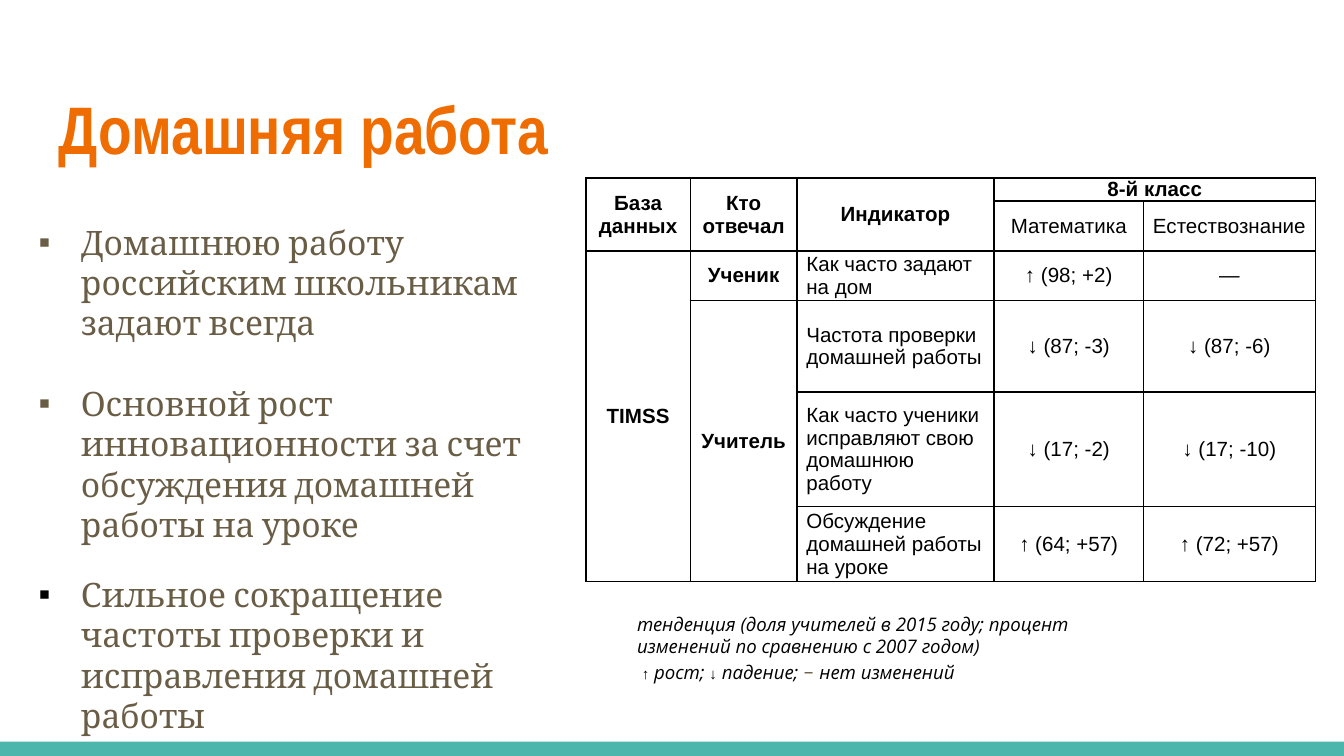
import pptx
import pptx.util
import pptx.dml.color
import pptx.enum.shapes
import pptx.enum.text
import pptx.oxml
import lxml.etree

Cm, Pt = pptx.util.Cm, pptx.util.Pt
ALIGN = pptx.enum.text.PP_ALIGN
ANCHOR = pptx.enum.text.MSO_ANCHOR

# Content
TITLE = "Домашняя работа"
# text, space before (pt), bullet colour name
POINTS = [
    ("Домашнюю работу российским школьникам задают всегда", 0, "brown"),
    ("Основной рост инновационности за счет обсуждения домашней работы на уроке", 21.6, "brown"),
    ("Сильное сокращение частоты проверки и исправления домашней работы", 16, "black"),
]
# None marks a cell covered by a merge
ROWS = [
    ["База данных", "Кто отвечал", "Индикатор", "8-й класс", None],
    [None, None, None, "Математика", "Естествознание"],
    ["TIMSS", "Ученик", "Как часто задают на дом", "↑ (98; +2)", "—"],
    [None, "Учитель", "Частота проверки домашней работы", "↓ (87; -3)", "↓ (87; -6)"],
    [None, None, "Как часто ученики исправляют свою домашнюю работу", "↓ (17; -2)", "↓ (17; -10)"],
    [None, None, "Обсуждение домашней работы на уроке", "↑ (64; +57)", "↑ (72; +57)"],
]
MERGES = [((0, 0), (1, 0)), ((0, 1), (1, 1)), ((0, 2), (1, 2)),
          ((0, 3), (0, 4)), ((2, 0), (5, 0)), ((3, 1), (5, 1))]
COLUMN_WIDTHS = [1.98, 2.01, 3.73, 2.82, 3.25]
ROW_HEIGHTS = [0.43, 0.94, 0.94, 1.73, 2.16, 1.42]
# line pitch (pt), then spans of text and style name
NOTE = [
    (11.8, [("тенденция (доля учителей в 2015 году; процент изменений "
             "по сравнению с 2007 годом)", "note")]),
    (13.9, [(" ", "note"), ("↑", "arrow"), (" рост; ", "note"), ("↓", "arrow"),
            (" падение; ", "note"), ("– ", "dash"), ("нет изменений", "note")]),
]

THEME = {
    "colors": {"orange": "EF6C00", "brown": "695D46", "teal": "4DB6AC",
               "black": "000000", "white": "FFFFFF"},
    "styles": {
        "title": dict(size=36, font="Arial Narrow", color="orange", bold=True),
        "point": dict(size=18, font="Cambria", color="brown"),
        "cell": dict(size=11, font="Arial", color="black"),
        "note": dict(size=10, font="Open Sans", color="black", italic=True),
        "arrow": dict(size=8, font="Arial", color="black"),
        "dash": dict(size=12, font="Calibri", color="brown"),
    },
}


def rgb(name):
    return pptx.dml.color.RGBColor.from_string(THEME["colors"][name])


def add_span(para, text, size, font, color, bold=False, italic=False):
    span = para.add_run()
    span.text = text
    span.font.size, span.font.name = Pt(size), font
    span.font.bold, span.font.italic = bold, italic
    span.font.color.rgb = rgb(color)


def add_xml(parent, tag, **attributes):
    child = lxml.etree.SubElement(parent, pptx.oxml.ns.qn(tag))
    for name, value in attributes.items():
        child.set(name, str(value))
    return child


def add_bullet(para, color):
    properties = para._p.get_or_add_pPr()
    indent = Cm(0.8)
    properties.set("marL", str(indent))
    properties.set("indent", str(-indent))
    add_xml(add_xml(properties, "a:buClr"), "a:srgbClr", val=THEME["colors"][color])
    add_xml(properties, "a:buFont", typeface="Arial")
    add_xml(properties, "a:buChar", char="▪")


def set_borders(cell):
    properties = cell._tc.get_or_add_tcPr()
    for position, tag in enumerate(("a:lnL", "a:lnR", "a:lnT", "a:lnB")):
        line = add_xml(properties, tag, w=Pt(1))
        add_xml(add_xml(line, "a:solidFill"), "a:srgbClr", val=THEME["colors"]["black"])
        properties.insert(position, line)


def set_frame(box):
    frame = box.text_frame
    frame.word_wrap = True
    frame.auto_size = pptx.enum.text.MSO_AUTO_SIZE.NONE
    frame.vertical_anchor = ANCHOR.TOP
    frame.margin_left = frame.margin_right = Cm(0.25)
    frame.margin_top = frame.margin_bottom = Cm(0.25)
    return frame


def paragraphs(frame, items):
    for index, item in enumerate(items):
        yield (frame.add_paragraph() if index else frame.paragraphs[0]), item


deck = pptx.Presentation()
deck.slide_width, deck.slide_height = Cm(25.4), Cm(14.29)
page = deck.slides.add_slide(deck.slide_layouts[5])
styles = THEME["styles"]

# Bottom strip
strip_height = Cm(0.27)
strip = page.shapes.add_shape(pptx.enum.shapes.MSO_SHAPE.RECTANGLE, 0,
                              deck.slide_height - strip_height,
                              deck.slide_width, strip_height)
strip.shadow.inherit = False
strip.fill.solid()
strip.fill.fore_color.rgb = rgb("teal")
strip.line.fill.background()

# Title
title = page.shapes.title
title.left, title.top, title.width, title.height = Cm(0.86), Cm(1.4), Cm(23.67), Cm(1.96)
title_para = set_frame(title).paragraphs[0]
title_para.alignment = ALIGN.LEFT
add_span(title_para, TITLE, **styles["title"])

# Bulleted points
points_box = page.shapes.add_textbox(Cm(0.48), Cm(3.94), Cm(10.26), Cm(9.17))
for para, (text, space, bullet_color) in paragraphs(set_frame(points_box), POINTS):
    para.line_spacing = Pt(21.6)
    para.space_before = Pt(space)
    add_bullet(para, bullet_color)
    add_span(para, text, **styles["point"])

# Table
table = page.shapes.add_table(len(ROWS), len(COLUMN_WIDTHS), Cm(11.07), Cm(3.37),
                              Cm(sum(COLUMN_WIDTHS)), Cm(sum(ROW_HEIGHTS))).table
for column, width in zip(table.columns, COLUMN_WIDTHS):
    column.width = Cm(width)
for row, height in zip(table.rows, ROW_HEIGHTS):
    row.height = Cm(height)
for start, end in MERGES:
    table.cell(*start).merge(table.cell(*end))
for r, texts in enumerate(ROWS):
    for c, text in enumerate(texts):
        cell = table.cell(r, c)
        cell.margin_left = cell.margin_right = Cm(0.18)
        cell.margin_top = cell.margin_bottom = 0
        cell.vertical_anchor = ANCHOR.MIDDLE
        cell.fill.solid()
        cell.fill.fore_color.rgb = rgb("white")
        set_borders(cell)
        para = cell.text_frame.paragraphs[0]
        para.font.size = Pt(styles["cell"]["size"])
        if text:
            is_indicator = c == 2 and r > 1
            para.alignment = ALIGN.LEFT if is_indicator else ALIGN.CENTER
            add_span(para, text, bold=r == 0 or c < 2, **styles["cell"])

# Note under the table
note_box = page.shapes.add_textbox(Cm(11.79), Cm(11.35), Cm(9.78), Cm(2.06))
for para, (pitch, spans) in paragraphs(set_frame(note_box), NOTE):
    para.line_spacing = Pt(pitch)
    for text, style in spans:
        add_span(para, text, **styles[style])

deck.save("out.pptx")
